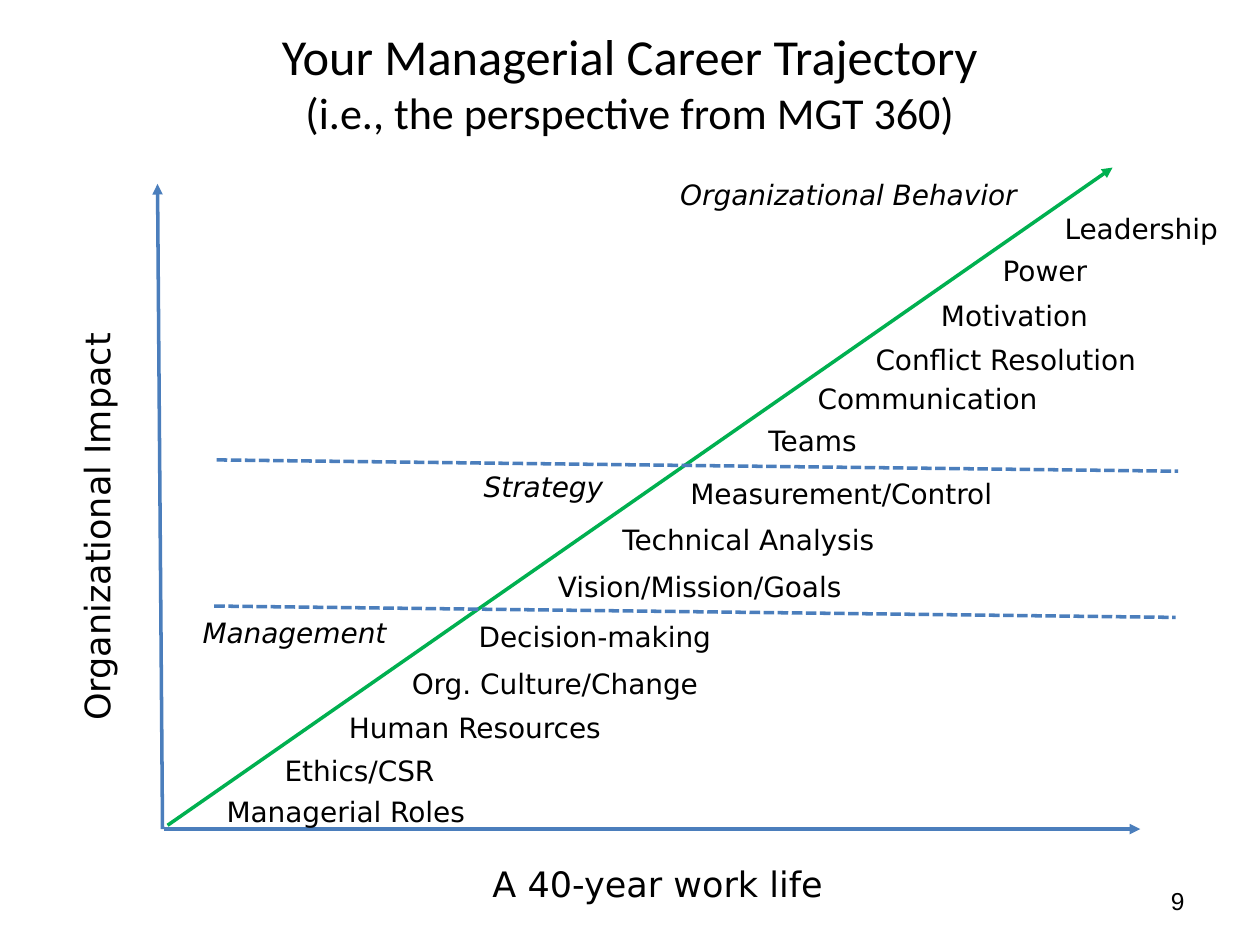
from lxml import etree
from pptx import Presentation
from pptx.dml.color import RGBColor
from pptx.enum.dml import MSO_LINE
from pptx.enum.shapes import MSO_CONNECTOR
from pptx.enum.text import MSO_ANCHOR, MSO_AUTO_SIZE, PP_ALIGN
from pptx.oxml.ns import qn
from pptx.util import Pt

PX = 9144
STRAIGHT = MSO_CONNECTOR.STRAIGHT
DASH = MSO_LINE.SQUARE_DOT
MIDDLE = MSO_ANCHOR.MIDDLE
NO_FIT = MSO_AUTO_SIZE.NONE
CENTER, RIGHT = PP_ALIGN.CENTER, PP_ALIGN.RIGHT
BLACK, BLUE, GREEN = "000000", "4B7EBC", "00B050"


def color(value):
    return RGBColor.from_string(value)


def format_run(run, size, name, italic=False):
    values = {"size": Pt(size), "name": name, "italic": italic, "bold": False}
    for attribute, value in values.items():
        setattr(run.font, attribute, value)
    run.font.color.rgb = color(BLACK)


presentation = Presentation()
presentation.slide_width = 1000 * PX
presentation.slide_height = 750 * PX
slide = presentation.slides.add_slide(presentation.slide_layouts[5])

title = slide.shapes.title
title_box = {"left": 50, "top": 30, "width": 900, "height": 70}
for attribute, value in title_box.items():
    setattr(title, attribute, value * PX)
title.text_frame.vertical_anchor = MIDDLE
title.text_frame.auto_size = NO_FIT
paragraph = title.text_frame.paragraphs[0]
paragraph.alignment = CENTER
run = paragraph.add_run()
run.text = "Your Managerial Career Trajectory"
format_run(run, 28.8, "Calibri")
paragraph.add_line_break()
run = paragraph.add_run()
run.text = "(i.e., the perspective from MGT 360)"
format_run(run, 25.2, "Calibri")

lines = [
    (130, 658, 905, 658, BLUE, "arrow"),
    (129, 658, 125, 146, BLUE, "arrow"),
    (133, 655, 883, 133, GREEN, "arrow"),
    (170, 481, 933, 490, BLUE, "dash"),
    (172, 365, 935, 374, BLUE, "dash"),
]
for x1, y1, x2, y2, line_color, style in lines:
    connector = slide.shapes.add_connector(STRAIGHT, x1 * PX, y1 * PX, x2 * PX, y2 * PX)
    connector.line.color.rgb = color(line_color)
    connector.line.width = Pt(2)
    if style == "dash":
        connector.line.dash_style = DASH
    else:
        etree.SubElement(connector.line._get_or_add_ln(), qn("a:tailEnd"), type="triangle")
    etree.SubElement(connector._element.spPr, qn("a:effectLst"))

topics = [
    ("Managerial Roles", 170, 626, 213),
    ("Ethics/CSR", 216, 593, 229),
    ("Human Resources", 267, 559, 229),
    ("Org. Culture/Change", 317, 524, 307),
    ("Decision-making", 370, 487, 275),
    ("Vision/Mission/Goals", 433, 447, 275),
    ("Technical Analysis", 484, 410, 275),
    ("Measurement/Control", 538, 373, 275),
    ("Teams", 600, 331, 275),
    ("Communication", 639, 298, 275),
    ("Conflict Resolution", 685, 267, 229),
    ("Motivation", 737, 232, 263),
    ("Power", 786, 196, 214),
    ("Leadership", 835, 163, 148),
]
stages = [
    ("Management", 151, 484, 213),
    ("Strategy", 374, 368, 213),
    ("Organizational Behavior", 530, 136, 292),
]
axis_titles = [
    ("A 40-year work life", 381, 680, 288, 0),
    ("Organizational Impact", -90, 393, 334, 270),
]
labels = [(*topic, 37, 16, False, 0) for topic in topics]
labels += [(*stage, 37, 16, True, 0) for stage in stages]
labels += [(*axis[:4], 44, 20, False, axis[4]) for axis in axis_titles]
for text, left, top, width, height, size, italic, rotation in labels:
    shape = slide.shapes.add_textbox(left * PX, top * PX, width * PX, height * PX)
    shape.rotation = rotation
    shape.text_frame.word_wrap = True
    run = shape.text_frame.paragraphs[0].add_run()
    run.text = text
    format_run(run, size, "DejaVu Sans", italic)

page_number = slide.shapes.add_textbox(717 * PX, 695 * PX, 233 * PX, 40 * PX)
page_number.text_frame.word_wrap = True
page_number.text_frame.vertical_anchor = MIDDLE
paragraph = page_number.text_frame.paragraphs[0]
paragraph.alignment = RIGHT
run = paragraph.add_run()
run.text = "9"
format_run(run, 14, "Arial")

presentation.save("out.pptx")
